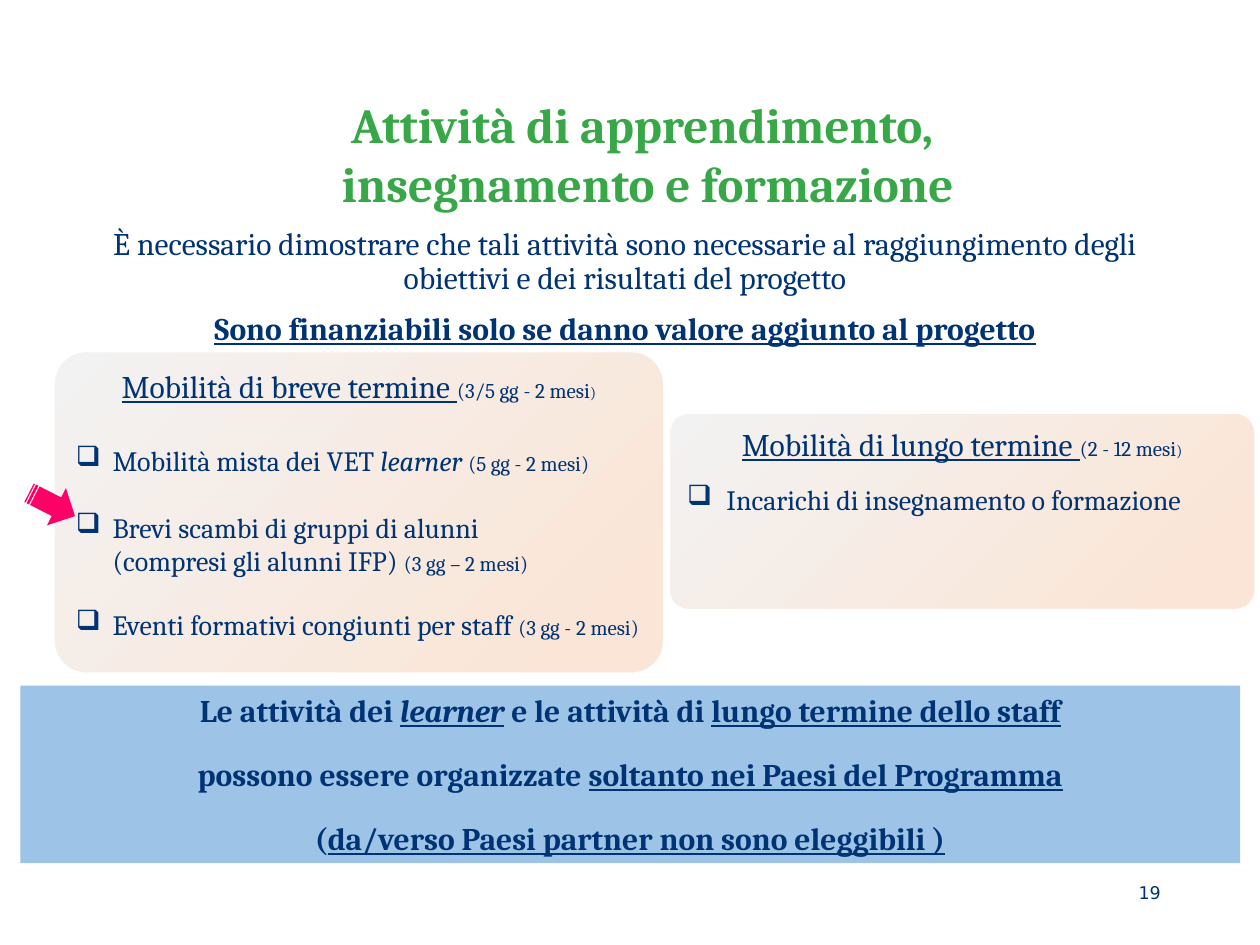
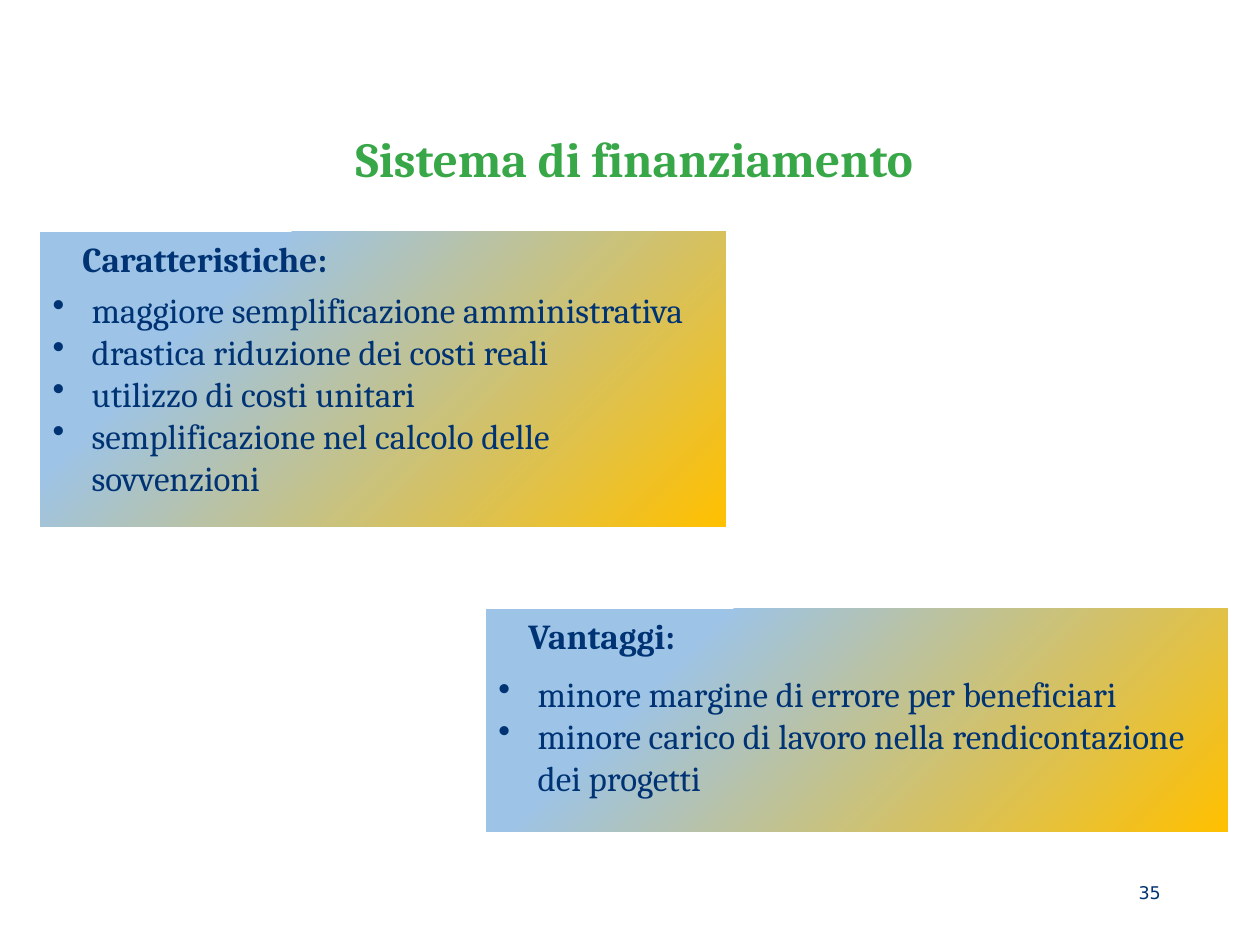
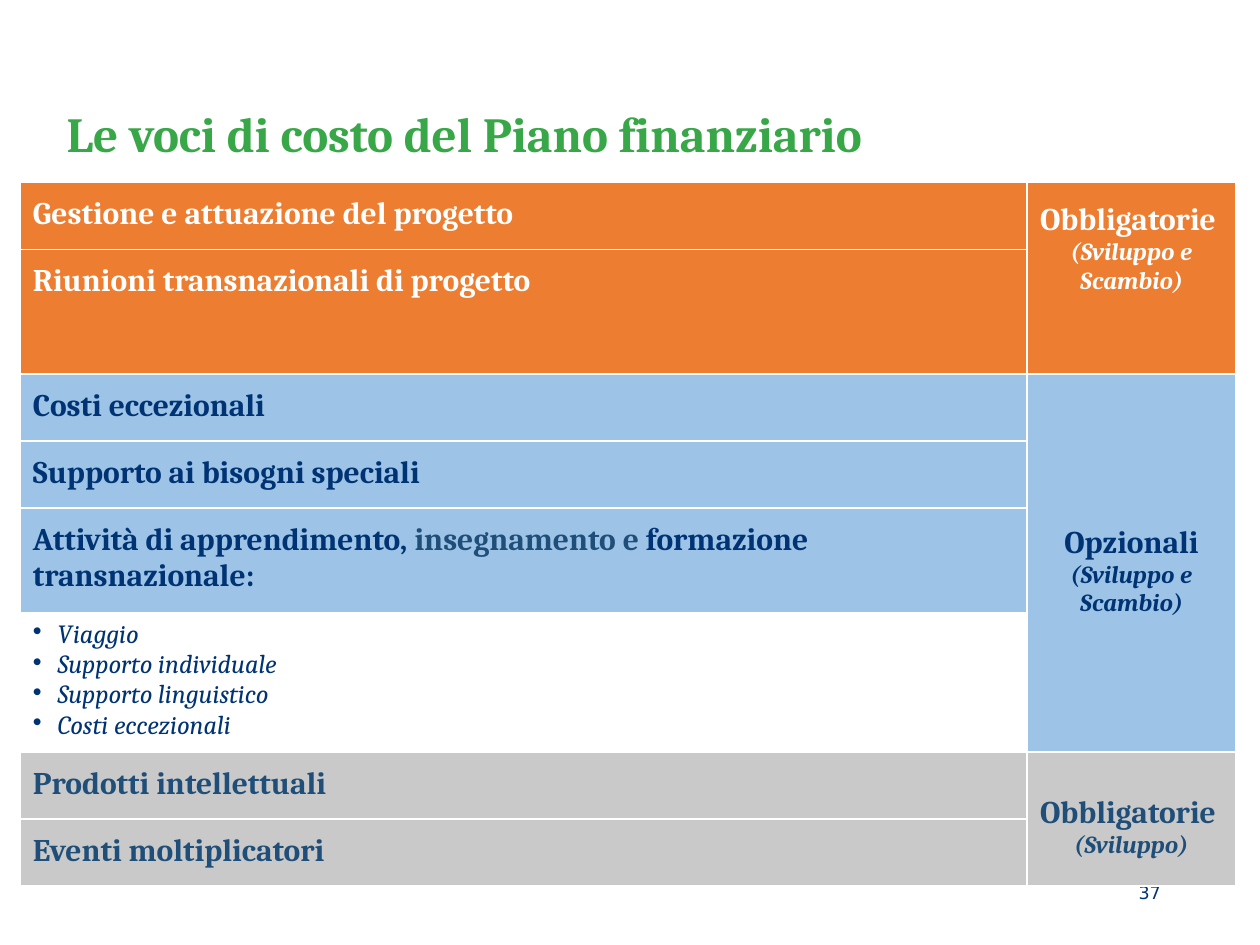
"""Build three slides on learning activities, funding and cost items."""
from pptx import Presentation
from pptx.dml.color import RGBColor
from pptx.enum import shapes as kinds, text as txt
from pptx.oxml import ns
from pptx.util import Cm, Pt
from lxml import etree

SERIF, SANS = "Cambria", "DejaVu Sans"
GREEN, NAVY, STEEL, WHITE = "38A748", "003374", "1F4E79", "FFFFFF"
SKY, ORANGE, GREY, GOLD, PINK = "9DC3E6", "ED7D31", "C9C9C9", "FFC000", "FF0066"
PEACH, MIST = "FBE5D6", "F2F2F2"
LEFT, CENTER, RIGHT = txt.PP_ALIGN.LEFT, txt.PP_ALIGN.CENTER, txt.PP_ALIGN.RIGHT
TOP, MIDDLE = txt.MSO_ANCHOR.TOP, txt.MSO_ANCHOR.MIDDLE


def rgb(value):
    """Turn a hex string into a colour."""
    return RGBColor.from_string(value)


def box(*lengths):
    """Convert left, top, width and height to Cm."""
    return [Cm(length) for length in lengths]


def write(frame, *runs, size=18, color=NAVY, font=SERIF, align=LEFT,
          before=0, spacing=None, bullet=None, hang=0, indent=0):
    """Add a paragraph of (words, flags, size, colour) runs; flags are b, i and u."""
    paragraph = frame.paragraphs[-1]
    if paragraph.runs:
        paragraph = frame.add_paragraph()
    paragraph.alignment = align
    paragraph.space_before = Pt(before)
    if spacing:
        paragraph.line_spacing = spacing
    properties = paragraph._p.get_or_add_pPr()
    properties.set("marL", str(Cm(hang or indent)))
    properties.set("indent", str(-Cm(hang)))
    mark = etree.SubElement(properties, ns.qn("a:buChar" if bullet else "a:buNone"))
    if bullet:
        mark.set("char", bullet)
    for words, flags, *custom in runs:
        if words == "\n":
            paragraph.add_line_break()
            continue
        run = paragraph.add_run()
        run.text = words
        run.font.name = font
        run.font.size = Pt(custom[0] if custom else size)
        run.font.color.rgb = rgb(custom[1] if len(custom) > 1 else color)
        run.font.bold = "b" in flags
        run.font.italic = "i" in flags
        run.font.underline = "u" in flags


def place(placeholder, position):
    """Move a placeholder and return its text frame."""
    placeholder.left, placeholder.top, placeholder.width, placeholder.height = box(*position)
    placeholder.text_frame.auto_size = txt.MSO_AUTO_SIZE.NONE
    return placeholder.text_frame


def start_slide(deck, layout, number, title_lines, title_position, align=CENTER):
    """Add a slide with its title and page number."""
    slide = deck.slides.add_slide(deck.slide_layouts[layout])
    title = place(slide.shapes.title, title_position)
    title.vertical_anchor = MIDDLE
    for words in title_lines:
        write(title, (words, "b"), size=28, color=GREEN, align=align)
    page = slide.shapes.add_textbox(*box(17.93, 17.65, 5.72, 1.02)).text_frame
    page.word_wrap = True
    write(page, (number, ""), size=10, font=SANS, align=RIGHT)
    return slide


def add_panel(slide, kind, position, fill=None, anchor=TOP):
    """Add a flat shape without outline, filled with one colour if given."""
    panel = slide.shapes.add_shape(kind, *box(*position))
    panel.shadow.inherit = False
    panel.line.fill.background()
    panel.text_frame.word_wrap = True
    panel.text_frame.vertical_anchor = anchor
    if fill:
        panel.fill.solid()
        panel.fill.fore_color.rgb = rgb(fill)
    return panel


def blend(panel, *stops):
    """Fill a panel with a diagonal gradient of two (colour, position) stops."""
    panel.fill.gradient()
    panel.fill.gradient_angle = 315
    for stop, (color, position) in zip(panel.fill.gradient_stops, stops):
        stop.color.rgb = rgb(color)
        stop.position = position


def add_mobility_card(slide, position, heading, duration):
    """Add a rounded card that glows from its lower right corner."""
    card = add_panel(slide, kinds.MSO_SHAPE.ROUNDED_RECTANGLE, position)
    card.adjustments[0] = 0.1
    card.line.color.rgb = rgb(WHITE)
    card.line.width = Pt(0.75)
    blend(card, (PEACH, 0.09), (MIST, 1))
    gradient = card._element.spPr.find(ns.qn("a:gradFill"))
    gradient.remove(gradient.find(ns.qn("a:lin")))
    glow = etree.SubElement(gradient, ns.qn("a:path"), path="circle")
    etree.SubElement(glow, ns.qn("a:fillToRect"), l="100000", t="100000")
    write(card.text_frame, (heading, "u"), (duration, "", 12), (")", "", 9), align=CENTER)
    return card.text_frame


def add_funding_panel(slide, position, heading, points, gap):
    """Add a blue to gold panel with a heading and bullet points."""
    panel = add_panel(slide, kinds.MSO_SHAPE.RECTANGLE, position)
    blend(panel, (SKY, 0.25), (GOLD, 1))
    write(panel.text_frame, (heading, "b"), size=20, indent=0.6)
    for index, point in enumerate(points):
        write(panel.text_frame, (point, ""), size=20, bullet="•", hang=0.79,
              before=0 if index else gap)


def fill_cell(cell, color, margin_top):
    """Colour a table cell and return its text frame."""
    cell.fill.solid()
    cell.fill.fore_color.rgb = rgb(color)
    cell.margin_top = Cm(margin_top)
    return cell.text_frame


def build_activities(deck):
    """Build the slide on learning activities."""
    slide = start_slide(deck, 1, "19",
                        ["Attività di apprendimento, ", "insegnamento e formazione"],
                        (2.16, 1.78, 21.79, 2.64))
    intro = place(slide.placeholders[1], (0.99, 4.47, 23.22, 3.56))
    write(intro, ("È necessario dimostrare che tali attività sono necessarie al "
                  "raggiungimento degli obiettivi e dei risultati del progetto", ""),
          align=CENTER, spacing=0.9)
    write(intro, ("Sono finanziabili solo se danno valore aggiunto al progetto", "bu"),
          align=CENTER, spacing=0.9, before=10)

    long_term = add_mobility_card(slide, (13.49, 8.33, 11.81, 3.96),
                                  "Mobilità di lungo termine ", "(2 - 12 mesi")
    write(long_term, ("Incarichi di insegnamento o formazione", ""),
          size=16, bullet="❑", hang=0.79, before=11)

    short_term = add_mobility_card(slide, (1.09, 7.09, 12.29, 6.48),
                                   "Mobilità di breve termine ", "(3/5 gg - 2 mesi")
    activities = [
        (22, [("Mobilità mista dei VET ", ""), ("learner ", "i"), ("(5 gg - 2 mesi)", "", 12)]),
        (19, [("Brevi scambi di gruppi di alunni", ""), ("\n", ""),
              ("(compresi gli alunni IFP) ", ""), ("(3 gg – 2 mesi)", "", 12)]),
        (17, [("Eventi formativi congiunti per staff ", ""), ("(3 gg - 2 mesi)", "", 12)]),
    ]
    for gap, runs in activities:
        write(short_term, *runs, size=16, bullet="❑", hang=0.74, before=gap)

    rule = add_panel(slide, kinds.MSO_SHAPE.RECTANGLE, (0.41, 13.82, 24.59, 3.58),
                     SKY, MIDDLE).text_frame
    rule_lines = [
        [("Le attività dei ", "b"), ("learner", "biu"), (" e le attività di ", "b"),
         ("lungo termine dello staff", "bu")],
        [("possono essere organizzate ", "b"), ("soltanto nei Paesi del Programma", "bu")],
        [("(", "b"), ("da/verso Paesi partner non sono eleggibili )", "bu")],
    ]
    for index, runs in enumerate(rule_lines):
        write(rule, *runs, align=CENTER, before=15 if index else 0)

    pointer = add_panel(slide, kinds.MSO_SHAPE.STRIPED_RIGHT_ARROW,
                        (0.53, 9.75, 1.04, 0.84), PINK)
    pointer.rotation = 27


def build_funding(deck):
    """Build the slide on the funding system."""
    slide = start_slide(deck, 5, "35", ["Sistema di finanziamento"], (1.09, 2.51, 23.39, 1.35))
    add_funding_panel(slide, (0.81, 4.67, 13.82, 5.94), "Caratteristiche:",
                      ["maggiore semplificazione amministrativa",
                       "drastica riduzione dei costi reali",
                       "utilizzo di costi unitari",
                       "semplificazione nel calcolo delle sovvenzioni"], 5)
    add_funding_panel(slide, (9.8, 12.27, 14.94, 4.5), "Vantaggi:",
                      ["minore margine di errore per beneficiari",
                       "minore carico di lavoro nella rendicontazione dei progetti"], 9)


def build_costs(deck):
    """Build the slide with the table of cost items."""
    slide = start_slide(deck, 5, "37", ["Le voci di costo del Piano finanziario"],
                        (1.09, 2.01, 23.39, 1.35), LEFT)
    items = [
        (1.35, ORANGE, WHITE, [("Gestione e attuazione del progetto", "b")]),
        (2.51, ORANGE, WHITE, [("Riunioni transnazionali di progetto", "b")]),
        (1.35, SKY, NAVY, [("Costi eccezionali", "b")]),
        (1.35, SKY, NAVY, [("Supporto ai bisogni speciali", "b")]),
        (2.12, SKY, NAVY, [("Attività di apprendimento, ", "b"),
                           ("insegnamento e", "b", 18, STEEL),
                           (" formazione transnazionale:", "b")]),
        (2.79, WHITE, NAVY, []),
        (1.35, GREY, STEEL, [("Prodotti intellettuali", "b")]),
        (1.35, GREY, STEEL, [("Eventi moltiplicatori", "b")]),
    ]
    subitems = ["Viaggio", "Supporto individuale", "Supporto linguistico", "Costi eccezionali"]
    groups = [
        (0, 1, ORANGE, WHITE, 0.4, "Obbligatorie ", "(Sviluppo e Scambio)"),
        (2, 5, SKY, NAVY, 3.05, "Opzionali", "(Sviluppo e Scambio)"),
        (6, 7, GREY, STEEL, 0.87, "Obbligatorie ", "(Sviluppo)"),
    ]
    height = sum(item[0] for item in items)
    costs = slide.shapes.add_table(len(items), 2, *box(0.41, 3.68, 24.51, height)).table
    costs.horz_banding = False
    costs.columns[0].width, costs.columns[1].width = Cm(20.29), Cm(4.22)
    for row, (row_height, fill, color, runs) in enumerate(items):
        costs.rows[row].height = Cm(row_height)
        frame = fill_cell(costs.cell(row, 0), fill, 0.28 if runs else 0.13)
        if runs:
            write(frame, *runs, color=color)
        else:
            for subitem in subitems:
                write(frame, (subitem, "i"), size=15, bullet="•", hang=0.5)
    for first, last, fill, color, margin, label, scope in groups:
        costs.cell(first, 1).merge(costs.cell(last, 1))
        frame = fill_cell(costs.cell(first, 1), fill, margin)
        write(frame, (label, "b"), color=color, align=CENTER)
        write(frame, (scope, "bi"), size=14, color=color, align=CENTER)


def main():
    """Build and save the deck."""
    deck = Presentation()
    deck.slide_width, deck.slide_height = Cm(25.4), Cm(19.05)
    build_activities(deck)
    build_funding(deck)
    build_costs(deck)
    deck.save("out.pptx")


if __name__ == "__main__":
    main()
